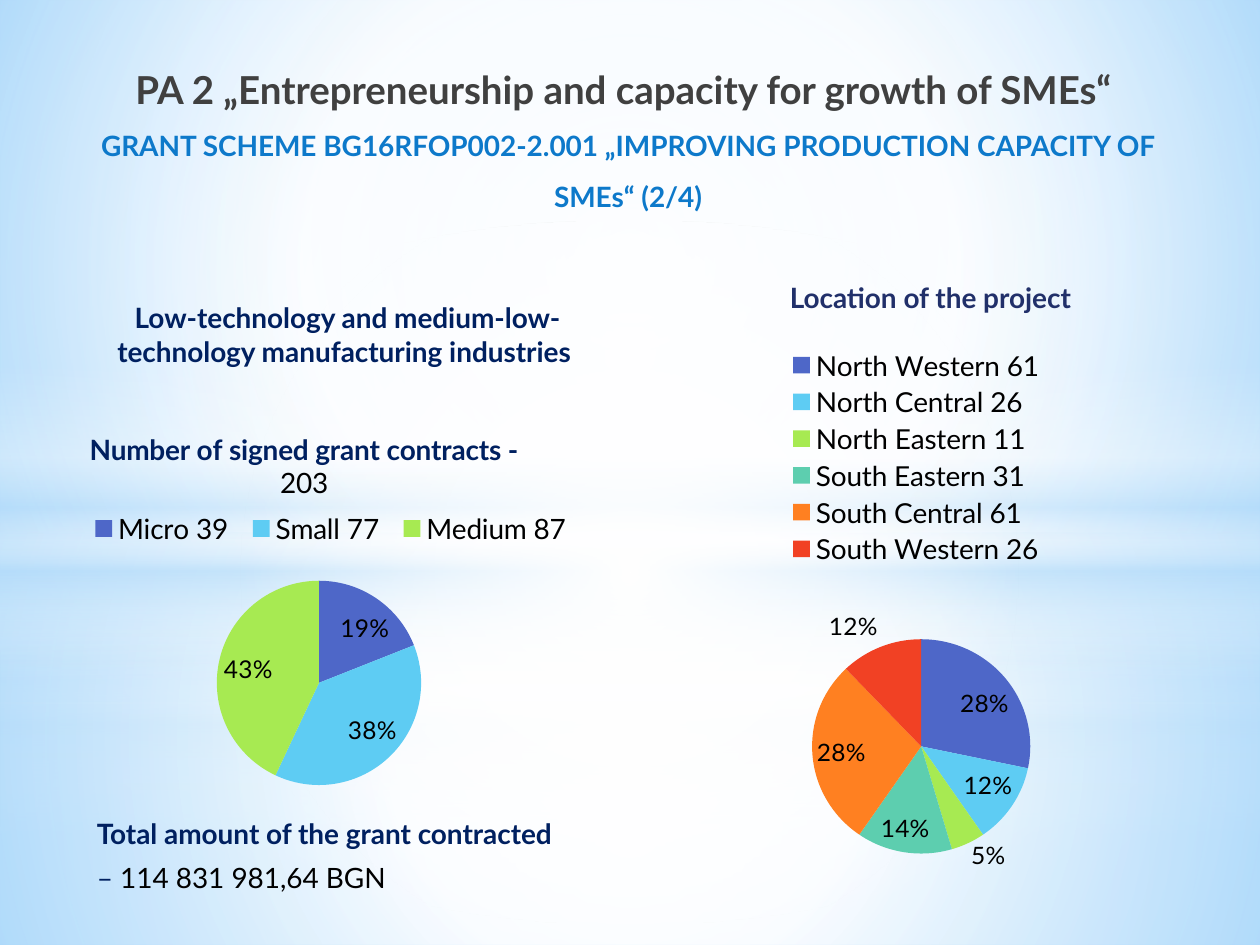
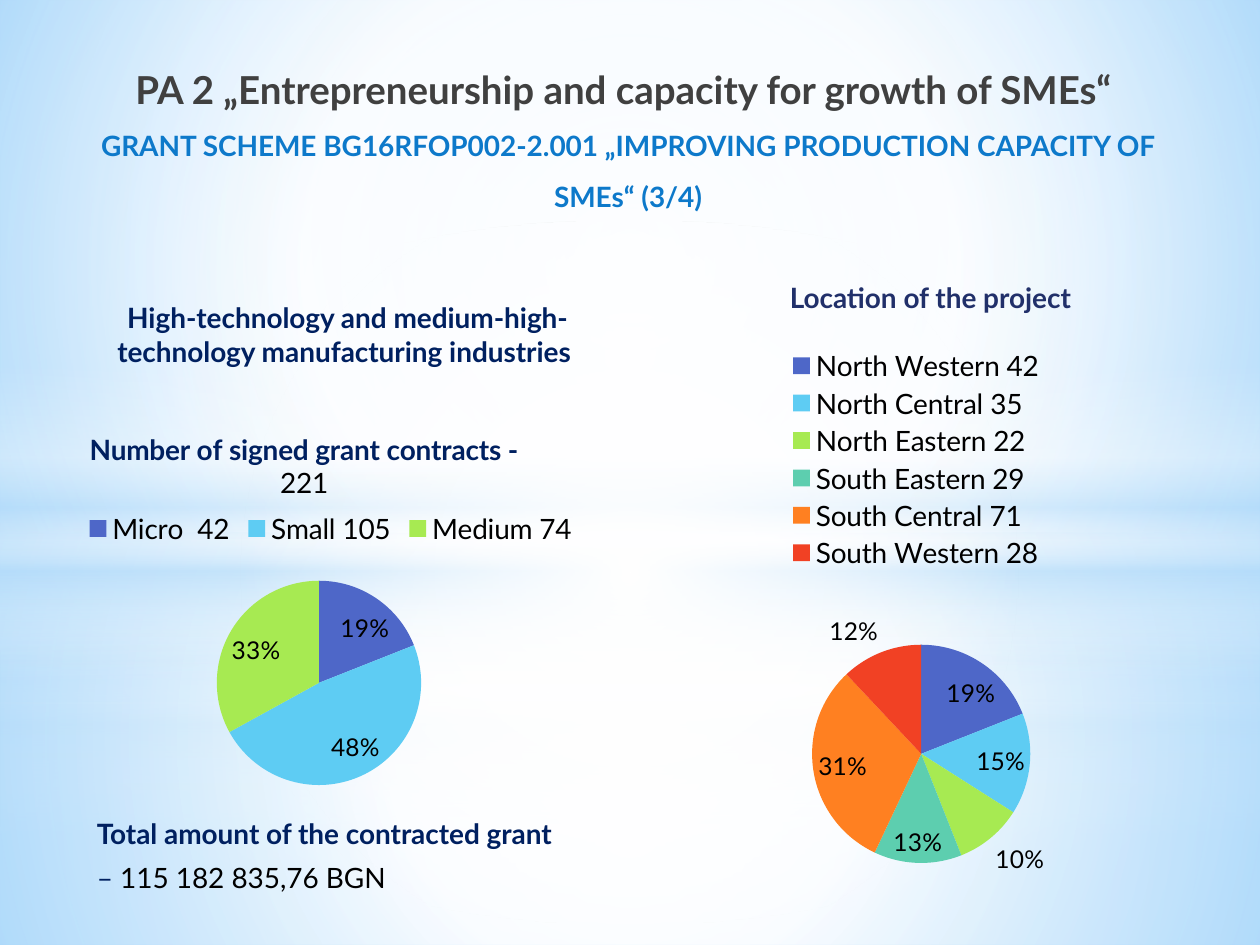
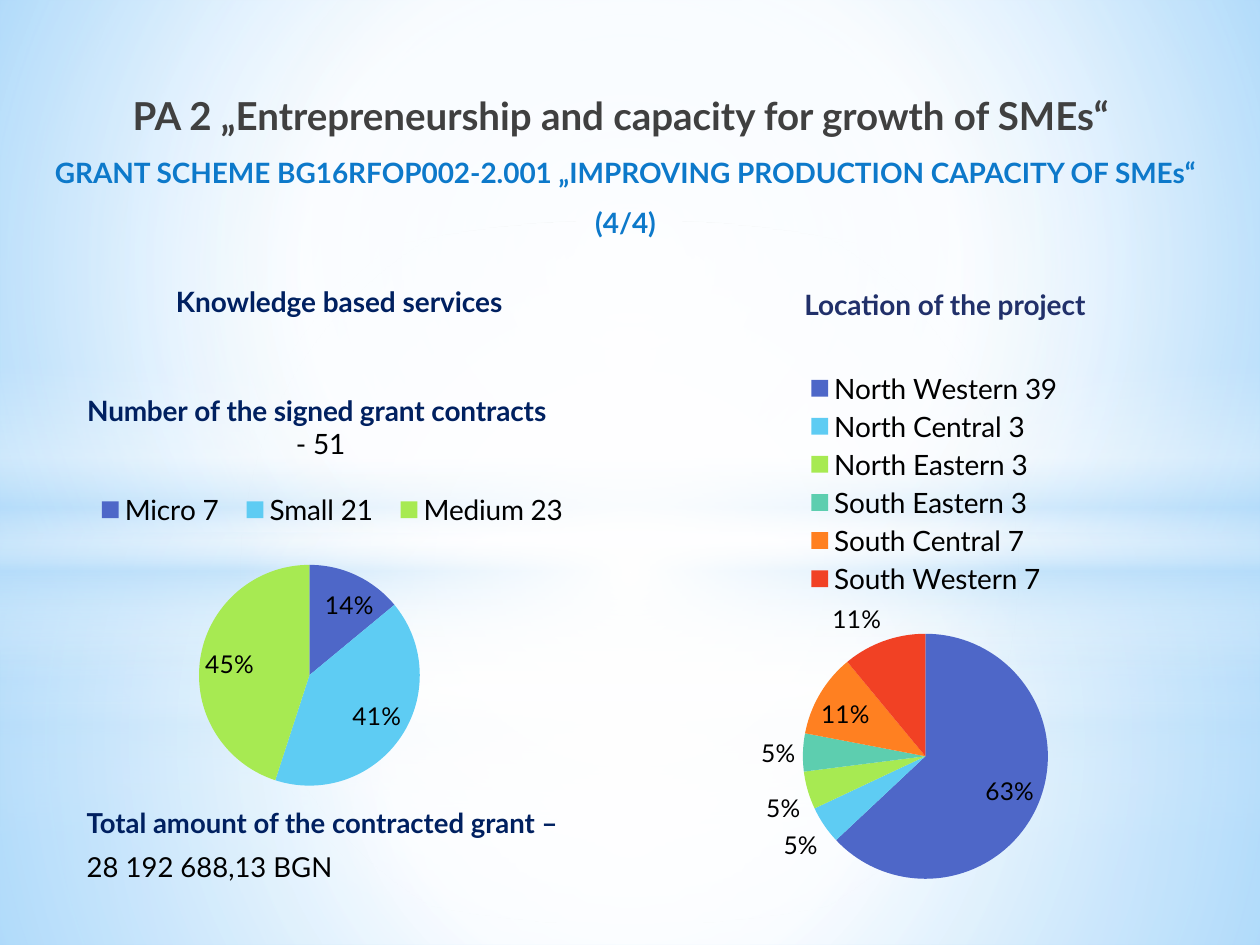
from lxml import etree
from pptx import Presentation, util as u
from pptx.chart import data as chart_data
from pptx.dml.color import RGBColor
from pptx.enum import chart as charts, shapes, text
from pptx.oxml import ns

PX = 9144  # one px is a hundredth of an inch
FONT = "Lato"
COLORS = {
    "white": "FFFFFF", "mist": "B4DCFA", "sky": "9ED5FF", "azure": "5BB9FF",
    "black": "000000", "charcoal": "404040", "scheme": "0D79CA",
    "navy": "002060", "indigo": "21306A",
}
SLICES = ["4E67C8", "5ECCF3", "A7EA52", "5DCEAF", "FF8021", "F14124"]
SIZES = ["Micro", "Small", "Medium"]
REGIONS = ["North Western", "North Central", "North Eastern",
           "South Eastern", "South Central", "South Western"]


def fill_gradient(properties, stops, center=None):
    """Replace an empty fill by a circular gradient, or a vertical one without a center."""
    empty = properties.find(ns.qn("a:noFill"))
    gradient = etree.Element(ns.qn("a:gradFill"), rotWithShape="1")
    stop_list = etree.SubElement(gradient, ns.qn("a:gsLst"))
    for position, color, opacity in stops:
        stop = etree.SubElement(stop_list, ns.qn("a:gs"), pos=str(position * 1000))
        tone = etree.SubElement(stop, ns.qn("a:srgbClr"), val=COLORS[color])
        etree.SubElement(tone, ns.qn("a:alpha"), val=str(opacity * 1000))
    if center:
        circle = etree.SubElement(gradient, ns.qn("a:path"), path="circle")
        sides = {side: str(inset * 1000) for side, inset in zip("ltrb", center)}
        etree.SubElement(circle, ns.qn("a:fillToRect"), **sides)
    else:
        etree.SubElement(gradient, ns.qn("a:lin"), ang="5400000", scaled="0")
    properties.replace(empty, gradient)


def place(part, index, inner=False, **fractions):
    """Give a chart part a manual layout in fractions of the chart."""
    for old in part.findall(ns.qn("c:layout")):
        part.remove(old)
    layout = etree.Element(ns.qn("c:layout"))
    manual = etree.SubElement(layout, ns.qn("c:manualLayout"))
    if inner:
        etree.SubElement(manual, ns.qn("c:layoutTarget"), val="inner")
    for axis in "xy":
        etree.SubElement(manual, ns.qn(f"c:{axis}Mode"), val="edge")
    for key, value in fractions.items():
        etree.SubElement(manual, ns.qn(f"c:{key}"), val=str(value))
    part.insert(index, layout)


deck = Presentation()
deck.slide_width, deck.slide_height = 1000 * PX, 750 * PX
title_only = deck.slide_layouts[5]
pages = [deck.slides.add_slide(title_only) for _ in range(3)]

# Shared background on the master
master = deck.slide_master
master.background.fill.background()
fill_gradient(master.element.find(".//" + ns.qn("p:bgPr")),
              [(0, "sky", 100), (60, "white", 100), (100, "azure", 100)], (20, 10, 20, 60))

MIDDLE = (50, 50, 50, 50)
BAND = [(0, "white", 0), (29, "white", 30), (45, "mist", 40),
        (55, "white", 26), (65, "mist", 60), (100, "white", 0)]
panels = []
for horizon, band_top, shift, glow_end in [(558, 412, 0, 56), (423, 290, 1, 54)]:
    floor = [(0, "white", 91 + shift), (37, "white", 76 + shift), (100, "mist", 79 + shift)]
    ceiling = [(0, "white", 89 + shift), (48, "white", 62 + shift), (100, "mist", 79 + shift)]
    glow = [(0, "white", 100), (glow_end, "white", 0)]
    panels += [
        ("RECTANGLE", horizon, 750 - horizon, floor, MIDDLE),
        ("RECTANGLE", 0, horizon, ceiling, MIDDLE),
        ("RECTANGLE", band_top, 250, BAND, None),
        ("OVAL", 175, 558, glow, MIDDLE),
    ]
for number, (kind, top, height, stops, center) in enumerate(panels):
    panel = pages[0].shapes.add_shape(shapes.MSO_SHAPE[kind], 0, top * PX, 1000 * PX, height * PX)
    panel.shadow.inherit = False
    panel.fill.background()
    fill_gradient(panel.element.spPr, stops, center)
    panel.line.fill.background()
    panel.element.nvSpPr.cNvPr.id = 20 + number
    master.shapes.element.insert(2 + number, panel.element)

# Placement: pages 2/4 and 3/4 share one arrangement, 4/4 has its own
WIDE = {
    "heading": (28, 29, 921, 146), "indent": 20, "title": "industry",
    "industry": (83, 218, 386, 79), "total": (67, 643, 457, 55),
    "location": (555, 218, 367, 37),
    "size chart": (59, 312, 457, 331), "chart title": dict(x=0.02, y=0.08),
    "size legend": dict(x=0.01, y=0.28, w=0.87, h=0.09),
    "size plot": dict(x=0.02, y=0.45, w=0.81, h=0.49),
    "region chart": (531, 265, 417, 433),
    "region legend": dict(x=0.22, y=0.02, w=0.5, h=0.42),
    "region plot": dict(x=0.05, y=0.57, w=0.86, h=0.4),
}
LAST = {
    "heading": (12, 49, 969, 146), "indent": 0, "title": "heading",
    "industry": (91, 221, 362, 37), "total": (59, 635, 457, 83),
    "location": (555, 223, 390, 37),
    "size chart": (35, 296, 520, 381), "chart title": dict(x=0.06, y=0.03),
    "size legend": dict(x=0.06, y=0.24, w=0.76, h=0.09),
    "size plot": dict(x=0.02, y=0.4, w=0.77, h=0.46),
    "region chart": (500, 260, 469, 442),
    "region legend": dict(x=0.3, y=0.07, w=0.43, h=0.42),
    "region plot": dict(x=0.16, y=0.55, w=0.68, h=0.44),
}

# Content: a span is (text, size, colour, bold); a final "\n" breaks the line
CONTENT = [
    {"place": WIDE, "industry": "Low-technology and medium-low-technology manufacturing industries ",
     "contracts": [("Number of signed grant contracts - ", 16, "navy", True),
                   ("203", 16, "black", False)],
     "total": [[("Total amount of the grant contracted", 16, "navy", True)],
               [("– ", 16, "navy", False), ("114 831 981,64 BGN", 16, "black", False)]],
     "size labels": ["39", "77", "87"], "size shares": [19, 38, 43],
     "region labels": [61, 26, 11, 31, 61, 26], "region shares": [28, 12, 5, 14, 28, 12]},
    {"place": WIDE, "industry": "High-technology and medium-high-technology manufacturing industries ",
     "contracts": [("Number of signed grant contracts - ", 16, "navy", True),
                   ("221", 16, "black", False)],
     "total": [[("Total amount of the contracted grant", 16, "navy", True)],
               [("– ", 16, "navy", False), ("115 182 835,76 BGN", 16, "black", False)]],
     "size labels": [" 42", "105", "74"], "size shares": [19, 48, 33],
     "region labels": [42, 35, 22, 29, 71, 28], "region shares": [19, 15, 10, 13, 31, 12]},
    {"place": LAST, "industry": "Knowledge based services ",
     "contracts": [("Number of the signed grant contracts\n", 16, "navy", True),
                   (" - 51", 16, "black", False)],
     "total": [[("Total amount of the contracted grant –", 15.7, "navy", True)],
               [("28 192 688,13 BGN", 15.7, "black", False)]],
     "size labels": ["7", "21", "23"], "size shares": [14, 41, 45],
     "region labels": [39, 3, 3, 3, 7, 7], "region shares": [63, 5, 5, 5, 11, 11]},
]

for number, (page, content) in enumerate(zip(pages, CONTENT), start=2):
    spots = content["place"]
    writing = []  # (paragraph, spans) pairs, filled in at the end of the page

    # Charts
    pies = [("size", [f"{name} {count}" for name, count in zip(SIZES, content["size labels"])]),
            ("region", [f"{name} {count}" for name, count in zip(REGIONS, content["region labels"])])]
    for kind, categories in pies:
        numbers = chart_data.CategoryChartData()
        numbers.categories = categories
        numbers.add_series("Series 1", content[f"{kind} shares"])
        frame = [length * PX for length in spots[f"{kind} chart"]]
        pie = page.shapes.add_chart(charts.XL_CHART_TYPE.PIE, *frame, numbers).chart
        pie.font.name, pie.font.size = FONT, u.Pt(18)
        pie.font.color.rgb = RGBColor.from_string(COLORS["black"])
        pie.has_title = kind == "size"
        if pie.has_title:
            writing.append((pie.chart_title.text_frame.paragraphs[0], content["contracts"]))
            place(pie.chart_title._element, 1, **spots["chart title"])
        pie.has_legend = True
        pie.legend.position = charts.XL_LEGEND_POSITION.TOP
        pie.legend.include_in_layout = False
        pie.legend.font.name, pie.legend.font.size = FONT, u.Pt(16)
        place(pie.legend._element, 1, **spots[f"{kind} legend"])
        plot = pie.plots[0]
        plot.vary_by_categories = True
        place(pie.element.find(".//" + ns.qn("c:plotArea")), 0, True, **spots[f"{kind} plot"])
        for index, color in enumerate(SLICES[:len(categories)]):
            slice_fill = plot.series[0].points[index].format.fill
            slice_fill.solid()
            slice_fill.fore_color.rgb = RGBColor.from_string(color)
        plot.has_data_labels = True
        labels = plot.data_labels
        labels.show_percentage, labels.show_value = True, False
        labels.number_format, labels.number_format_is_linked = "0%", False
        labels.position = charts.XL_LABEL_POSITION.BEST_FIT
        labels.font.name, labels.font.size = FONT, u.Pt(14)

    # Texts
    blocks = {
        "heading": [[
            ("PA 2 „Entrepreneurship and capacity for growth of SMEs“ \n", 22, "charcoal", True),
            ("GRANT SCHEME BG16RFOP002-2.001 „IMPROVING PRODUCTION CAPACITY OF SMEs“ "
             f"({number}/4)", 16, "scheme", True)]],
        "industry": [[(content["industry"], 16, "navy", True)]],
        "location": [[("Location of the project", 16, "indigo", True)]],
        "total": content["total"],
    }
    for name, paragraphs in blocks.items():
        frame = [length * PX for length in spots[name]]
        is_title = name == spots["title"]
        box = page.shapes.title if is_title else page.shapes.add_textbox(*frame)
        box.left, box.top, box.width, box.height = frame
        body = box.text_frame
        body.word_wrap = True
        body.auto_size = text.MSO_AUTO_SIZE.NONE
        body.vertical_anchor = text.MSO_ANCHOR.BOTTOM if is_title else text.MSO_ANCHOR.TOP
        for index, spans in enumerate(paragraphs):
            para = body.add_paragraph() if index else body.paragraphs[0]
            para.alignment = text.PP_ALIGN.LEFT if name == "total" else text.PP_ALIGN.CENTER
            if name == "heading":
                para.line_spacing, para.space_after = 1.5, u.Pt(3)
                para._p.get_or_add_pPr().set("marL", str(spots["indent"] * PX))
            if name == "total":
                para.space_before, para.space_after = u.Pt(3), u.Pt(3)
            writing.append((para, spans))

    for para, spans in writing:
        for words, size, color, bold in spans:
            span = para.add_run()
            span.text = words.rstrip("\n")
            span.font.name, span.font.size, span.font.bold = FONT, u.Pt(size), bold
            span.font.color.rgb = RGBColor.from_string(COLORS[color])
            if words.endswith("\n"):
                para.add_line_break()

deck.save("out.pptx")
